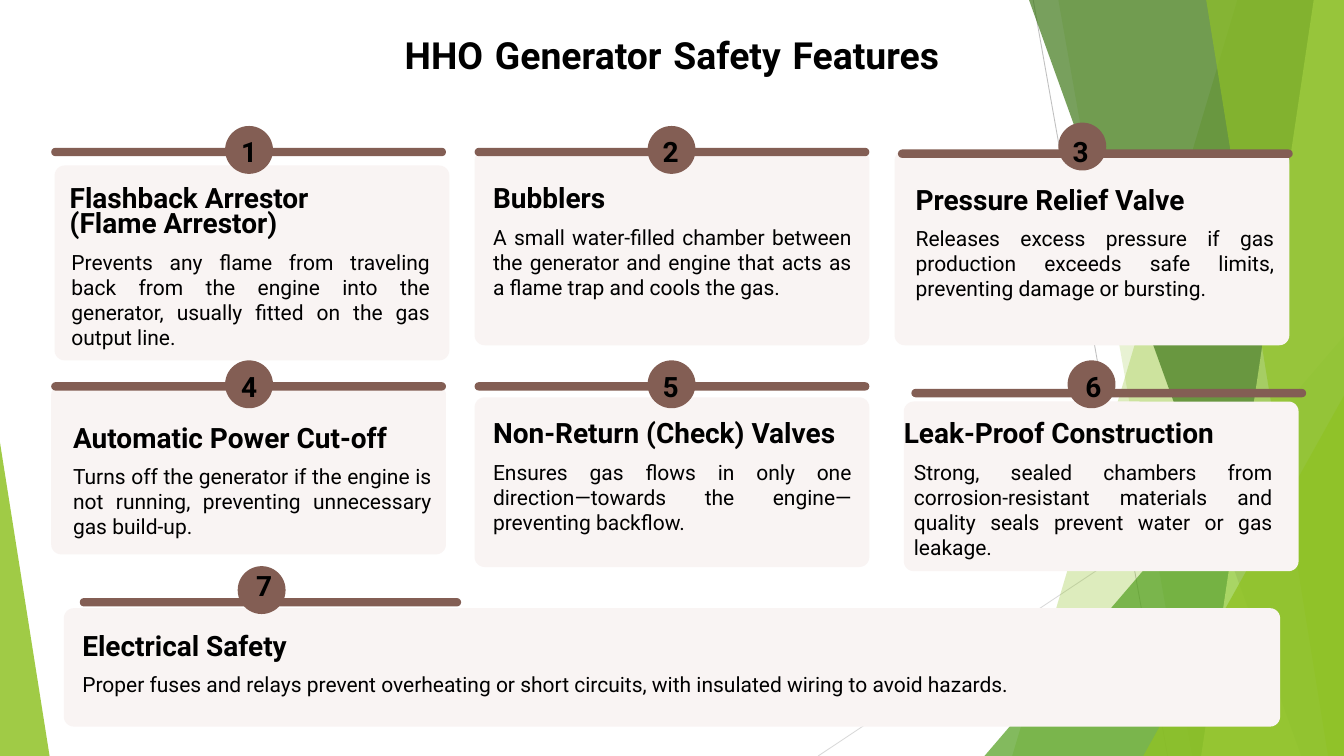
from lxml import etree
from pptx import Presentation
from pptx.dml.color import RGBColor
from pptx.enum.shapes import MSO_CONNECTOR, MSO_SHAPE as SHAPE
from pptx.enum.text import PP_ALIGN as ALIGN
from pptx.oxml.ns import qn
from pptx.util import Inches, Pt

prs = Presentation()
prs.slide_width, prs.slide_height = Inches(16), Inches(9)
s = prs.slides.add_slide(prs.slide_layouts[6])


def paint(sp, color, opacity=100):
    sp.shadow.inherit = False
    sp.line.fill.background()
    sp.fill.solid()
    sp.fill.fore_color.rgb = RGBColor.from_string(color)
    if opacity < 100:
        srgb = sp.fill._xPr.find(qn("a:solidFill"))[0]
        etree.SubElement(srgb, qn("a:alpha")).set("val", str(opacity * 1000))


def add_text(x, y, w, h, text, size, spacing, bold=False, wrap=False, align=ALIGN.JUSTIFY):
    tf = s.shapes.add_textbox(Inches(x), Inches(y), Inches(w), Inches(h)).text_frame
    tf.margin_left = tf.margin_right = tf.margin_top = tf.margin_bottom = 0
    tf.word_wrap = wrap
    tf.text = text
    for p in tf.paragraphs:
        p.alignment = align
        p.line_spacing = Pt(spacing)
        p.font.name, p.font.size, p.font.bold = "Roboto", Pt(size), bold
        p.font.color.rgb = RGBColor.from_string("000000")
    return tf


# Thin background lines
for x1, y1, x2, y2, color in [(12.3, 0, 13.9, 9, "BFBFBF"), (16, 4.83, 9.74, 9, "D9D9D9")]:
    line = s.shapes.add_connector(MSO_CONNECTOR.STRAIGHT, Inches(x1), Inches(y1), Inches(x2), Inches(y2))
    line.line.color.rgb = RGBColor.from_string(color)
    line.line.width = Pt(0.75)
    etree.SubElement(line._element.spPr, qn("a:effectLst"))

# Green facets: bands (top x, bottom x) reach the right edge,
# triangles (left, top, width, height, apex) stand on the bottom edge
facets = [
    ((14.73, 12.05), "90C226", 30),
    ((12.6, 14.19), "90C226", 20),
    ((11.72, 4, 4.28, 5, 1), "54A021", 72),
    ((12.25, 15.49), "3F7819", 70),
    ((15.64, 14.3), "C0E474", 70),
    ((14.36, 15.81), "90C226", 65),
    ((13.61, 4.71, 2.39, 4.29, 1), "90C226", 80),
    ((0, 5.27, 0.59, 3.73, 0), "90C226", 85),
]
for geometry, color, opacity in facets:
    if len(geometry) == 2:
        top, bottom = geometry
        fb = s.shapes.build_freeform(Inches(top), 0)
        fb.add_line_segments([(Inches(x), Inches(y)) for x, y in [(16, 0), (16, 9), (bottom, 9)]])
        sp = fb.convert_to_shape()
    else:
        *box, apex = geometry
        sp = s.shapes.add_shape(SHAPE.ISOSCELES_TRIANGLE, *map(Inches, box))
        sp.adjustments[0] = apex
    paint(sp, color, opacity)

# Title, with wider gaps between words
tf = add_text(4.2, 0.35, 7.6, 0.67, "", 32, 42.5, bold=True, align=ALIGN.CENTER)
p = tf.paragraphs[0]
for i, word in enumerate(["HHO", "Generator", "Safety", "Features"]):
    if i:
        r = p.add_run()
        r.text, r.font.size = " ", Pt(40)
    r = p.add_run()
    r.text = word

# Cards: panel box, bar (x, y, width), badge, number, heading, body (x, y, width, wrap), texts
cards = [
    ((0.65, 1.97, 4.7, 2.32), (0.61, 1.76, 4.7), (2.68, 1.5), (2.87, 1.64),
     (0.83, 2.26), (0.85, 2.97, 4.27, True), "Flashback Arrestor\n(Flame Arrestor)",
     "Prevents any flame from traveling back from the engine into the generator, "
     "usually fitted on the gas output line."),
    ((5.65, 1.79, 4.7, 2.32), (5.65, 1.76, 4.7), (7.71, 1.5), (7.89, 1.64),
     (5.87, 2.26), (5.87, 2.67, 4.27, True), "Bubblers",
     "A small water-filled chamber between the generator and engine that acts as "
     "a flame trap and cools the gas."),
    ((10.65, 1.79, 4.7, 2.32), (10.69, 1.78, 4.7), (12.6, 1.46), (12.77, 1.64),
     (10.9, 2.28), (10.9, 2.69, 4.27, True), "Pressure Relief Valve",
     "Releases excess pressure if gas production exceeds safe limits, "
     "preventing damage or bursting."),
    ((0.61, 4.58, 4.7, 2.02), (0.61, 4.55, 4.7), (2.68, 4.29), (2.87, 4.44),
     (0.87, 5.11), (0.87, 5.52, 4.27, True), "Automatic Power Cut-off",
     "Turns off the generator if the engine is not running, "
     "preventing unnecessary gas build-up."),
    ((5.65, 4.73, 4.7, 2.02), (5.65, 4.55, 4.7), (7.71, 4.29), (7.89, 4.44),
     (5.87, 5.06), (5.87, 5.47, 4.27, True), "Non-Return (Check) Valves",
     "Ensures gas flows in only one direction—towards the engine—preventing backflow."),
    ((10.76, 4.78, 4.7, 2.02), (10.85, 4.63, 4.7), (12.71, 4.29), (12.92, 4.44),
     (10.76, 5.06), (10.88, 5.47, 4.27, True), "Leak-Proof Construction",
     "Strong, sealed chambers from corrosion-resistant materials and quality seals "
     "prevent water or gas leakage."),
    ((0.76, 7.24, 14.48, 1.41), (0.95, 7.12, 4.54), (2.83, 6.74), (3.05, 6.81),
     (0.98, 7.59), (0.98, 8, 14.04, False), "Electrical Safety",
     "Proper fuses and relays prevent overheating or short circuits, "
     "with insulated wiring to avoid hazards."),
]
for n, (panel, bar, badge, number, head, body, heading, text) in enumerate(cards, 1):
    parts = [
        (panel, 0.12 / panel[3], "F9F4F3"),
        ((*bar, 0.1), 0.5, "835E54"),
        ((*badge, 0.57, 0.57), 0.5, "835E54"),
    ]
    for box, radius, color in parts:
        sp = s.shapes.add_shape(SHAPE.ROUNDED_RECTANGLE, *map(Inches, box))
        sp.adjustments[0] = radius
        paint(sp, color)
    lines = heading.count("\n") + 1
    x, y, w, wrap = body
    add_text(*number, 0.23, 0.29, str(n), 24, 26, bold=True)
    add_text(*head, 4.27, 0.3 * lines, heading, 24, 21, bold=True)
    add_text(x, y, w, 0.91 if wrap else 0.3, text, 18, 21.5, wrap=wrap)

prs.save("out.pptx")
